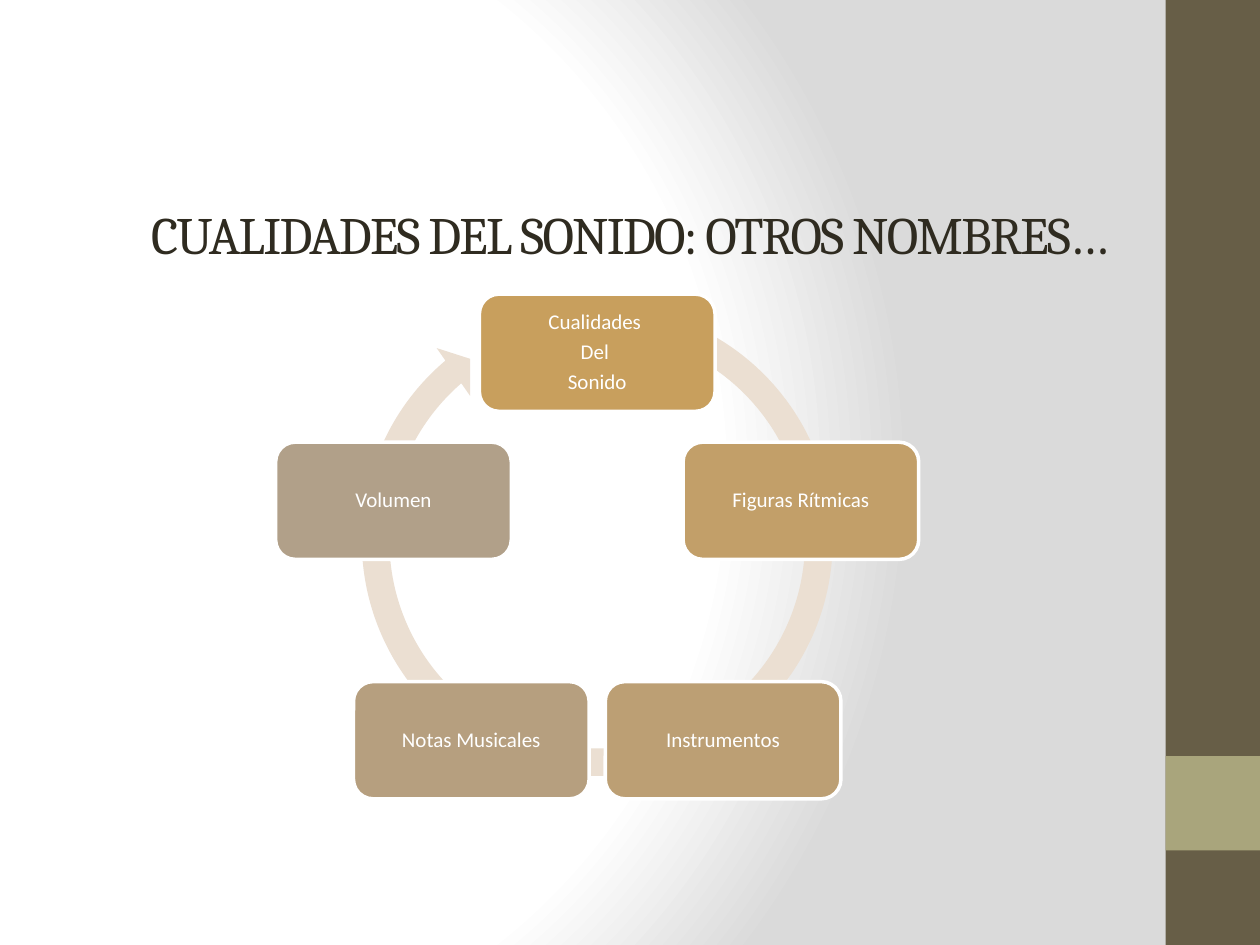
from math import cos, radians, sin

from lxml import etree
from pptx import Presentation
from pptx import util as u
from pptx.dml.color import RGBColor
from pptx.enum import shapes, text
from pptx.oxml import parse_xml
from pptx.oxml.ns import nsdecls, qn

HUES = {"bar": "675E47", "tab": "A9A57C", "title": "2F2B20",
        "ring": "EBDFD2", "white": "FFFFFF"}
KIND = shapes.MSO_SHAPE

deck = Presentation()
deck.slide_width, deck.slide_height = u.Inches(10), u.Inches(7.5)
slide = deck.slides.add_slide(deck.slide_layouts[6])


def draw(kind, box, hue, edge=None):
    """Add a filled preset shape, with a 2 pt outline if edge is given."""
    shape = slide.shapes.add_shape(kind, *map(u.Inches, box))
    shape.shadow.inherit = False
    shape.fill.solid()
    shape.fill.fore_color.rgb = RGBColor.from_string(hue)
    if edge:
        shape.line.color.rgb = RGBColor.from_string(edge)
        shape.line.width = u.Pt(2)
    else:
        shape.line.fill.background()
    return shape


def write(shape, lines, face, size, hue, pads, form):
    """Fill a shape with centred lines; form holds paragraph settings."""
    frame = shape.text_frame
    frame.word_wrap = True
    frame.vertical_anchor = text.MSO_ANCHOR.MIDDLE
    for side, pad in zip(("left", "top", "right", "bottom"), pads * 2):
        setattr(frame, f"margin_{side}", u.Inches(pad))
    for i, line in enumerate(lines):
        para = frame.add_paragraph() if i else frame.paragraphs[0]
        para.alignment = text.PP_ALIGN.CENTER
        for key, val in form.items():
            setattr(para, key, val)
        run = para.add_run()
        run.text = line
        run.font.name, run.font.size = face, u.Pt(size)
        run.font.color.rgb = RGBColor.from_string(hue)
    return frame


# Background: round gradient, white on the left to grey on the right
fill = slide.background.fill
fill.gradient()
old = next(slide.element.iter(qn("a:gradFill")))
grad = parse_xml(f'<a:gradFill {nsdecls("a")} rotWithShape="1"><a:gsLst/>'
                 '<a:path path="circle"><a:fillToRect l="20000" t="50000" '
                 'r="100000" b="50000"/></a:path></a:gradFill>')
for pos, hue in ((0, "FFFFFF"), (75, "FFFFFF"), (100, "DADADA")):
    stop = etree.SubElement(grad[0], qn("a:gs"), pos=str(pos * 1000))
    etree.SubElement(stop, qn("a:srgbClr"), val=hue)
old.getparent().replace(old, grad)

# Side bar
draw(KIND.RECTANGLE, (9.25, 0, 0.75, 7.5), HUES["bar"])
draw(KIND.RECTANGLE, (9.25, 6, 0.75, 0.75), HUES["tab"])

# Title
title = slide.shapes.add_textbox(*map(u.Inches, (0.69, 1.39, 8.62, 0.93)))
frame = write(title, ["CUALIDADES DEL SONIDO: OTROS NOMBRES…"], "Cambria", 30,
              HUES["title"], (0.07, 0.04), {})
frame.paragraphs[0].runs[0].font._element.set("spc", "-100")

# Ring arrow behind the nodes
ring = draw(KIND.CIRCULAR_ARROW, (2.75, 2.3, 3.98, 3.98), HUES["ring"])
for i, val in enumerate((0.055, 3.307, 137.715, 173.887, 0.058)):
    ring.adjustments[i] = val

# Five nodes, clockwise from the top of a circle
NODES = [(["Cualidades ", "Del ", "Sonido"], "C89F5D"),
         (["Figuras Rítmicas"], "C29F69"),
         (["Instrumentos"], "BC9F74"),
         (["Notas Musicales"], "B69F7F"),
         (["Volumen"], "B1A089")]
MID_X, MID_Y, RADIUS = 4.74, 4.5, 1.7
WIDE, HIGH = 1.87, 0.93
FORM = {"line_spacing": 0.9, "space_after": u.Pt(4)}
for i, (lines, hue) in enumerate(NODES):
    turn = radians(i * 360 / len(NODES))
    left = MID_X + RADIUS * sin(turn) - WIDE / 2
    top = MID_Y - RADIUS * cos(turn) - HIGH / 2
    node = draw(KIND.ROUNDED_RECTANGLE, (left, top, WIDE, HIGH), hue,
                HUES["white"])
    write(node, lines, "Calibri", 12, HUES["white"], (0.1, 0.1), FORM)

deck.save("out.pptx")
